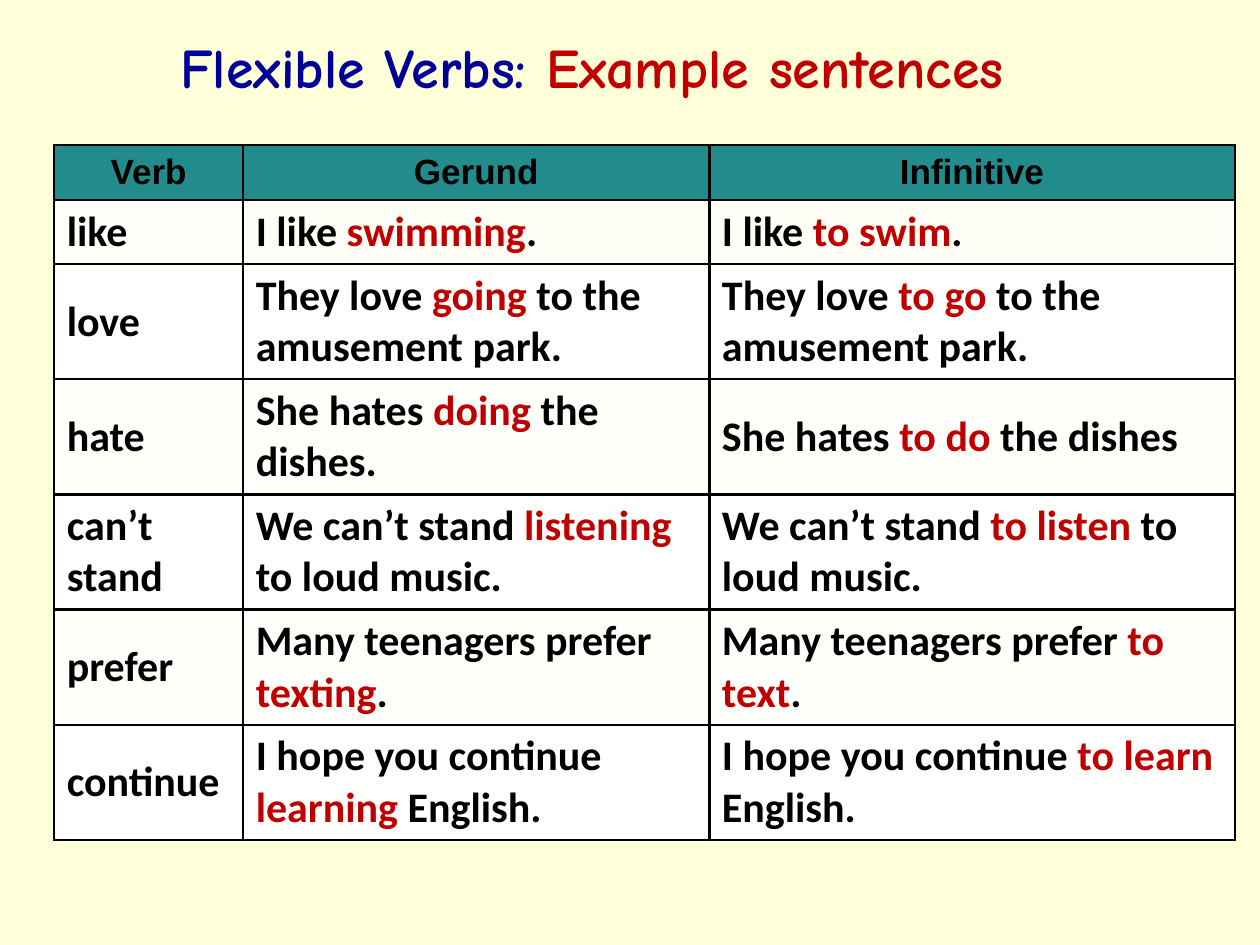
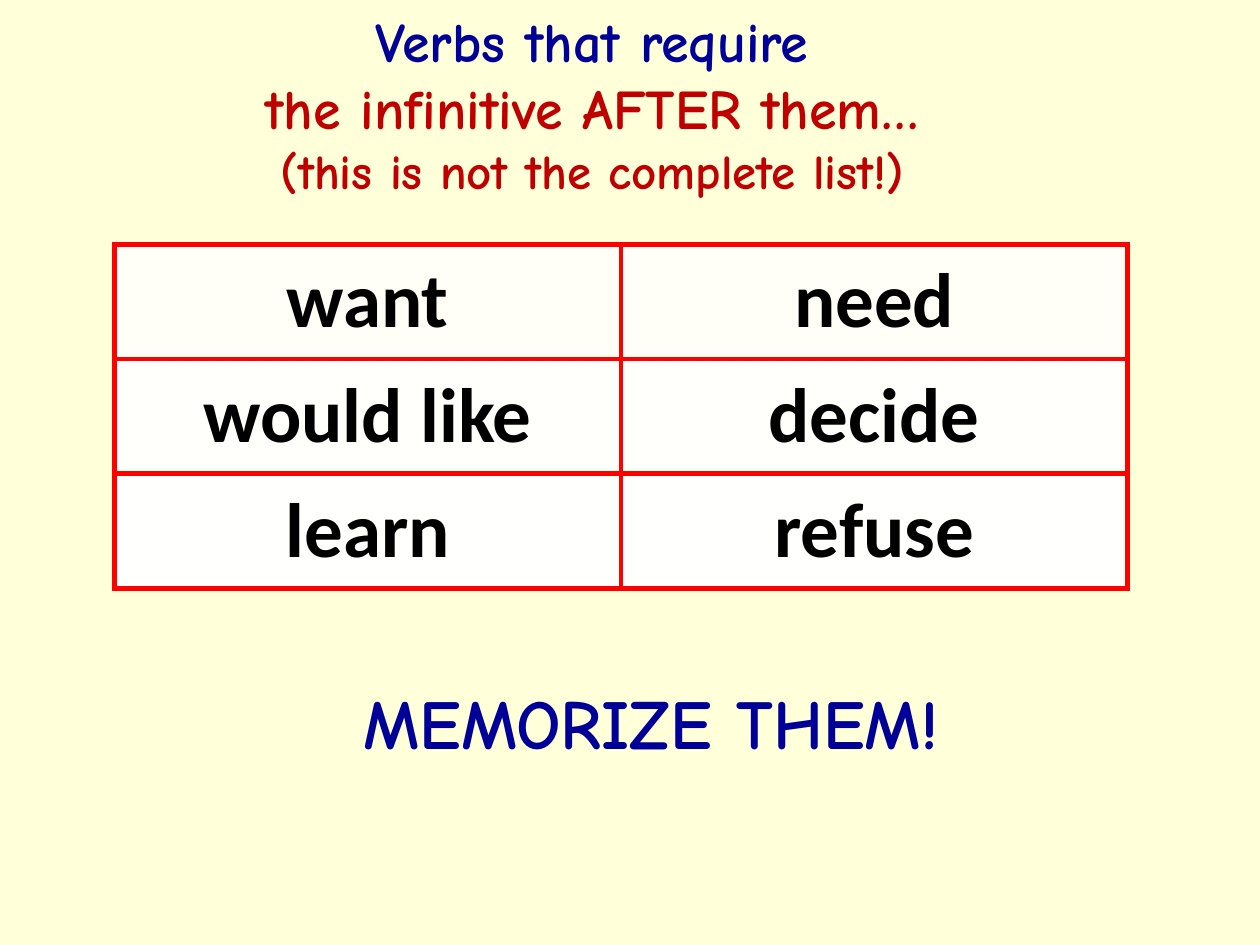
from copy import deepcopy
from dataclasses import dataclass

from lxml.etree import SubElement as Sub
from pptx import Presentation as Deck
from pptx.dml.color import RGBColor as Rgb
from pptx.enum.text import MSO_ANCHOR as Anchor, MSO_AUTO_SIZE as Fit, PP_ALIGN as Align
from pptx.oxml import parse_xml
from pptx.oxml.ns import nsdecls, qn
from pptx.util import Inches, Pt


@dataclass(frozen=True)
class Theme:
    page: str = "FFFFD9"
    navy: str = "000099"
    red: str = "C00000"
    black: str = "000000"
    teal: str = "228B8B"
    frame: str = "FF0000"
    cream: str = "FFFFF7"
    pale: str = "FFFFFC"
    white: str = "FFFFFD"
    comic: str = "Comic Neue"
    sans: str = "Arial"
    body: str = "Calibri"
    head: int = 20
    cell: int = 24
    note: int = 28
    title: int = 32
    shout: int = 40
    word: int = 44


T = Theme()


def write(para, text, font=T.body, size=T.cell, color=T.black, align=None):
    if align is not None:
        para.alignment = align
    for i, part in enumerate(text.split("|")):
        for j, line in enumerate(part.split("\n")):
            if j:
                para.add_line_break()
                para._p[-1].append(deepcopy(run._r.rPr))
            if not line:
                continue
            run = para.add_run()
            run.text = line
            run.font.name, run.font.size, run.font.bold = font, Pt(size), True
            run.font.color.rgb = Rgb.from_string(T.red if i % 2 else color)
    return run


def add_title(slide, top, high):
    title = slide.shapes.title
    title.left, title.top = Inches(0.2), Inches(top)
    title.width, title.height = Inches(9), Inches(high)
    frame = title.text_frame
    frame.word_wrap, frame.auto_size = True, Fit.NONE
    frame.vertical_anchor = Anchor.MIDDLE
    return frame.paragraphs[0]


def edge(cell, color, width):
    props = cell._tc.get_or_add_tcPr()
    for side in "LRTB":
        line = Sub(props, qn("a:ln" + side), w=str(Pt(width)))
        Sub(Sub(line, qn("a:solidFill")), qn("a:srgbClr"), val=color)


def paint(cell, color):
    cell.fill.solid()
    cell.fill.fore_color.rgb = Rgb.from_string(color)


def add_grid(slide, left, top, cols, high, rows, fills, styles, line, width):
    shape = slide.shapes.add_table(
        len(rows), len(cols), Inches(left), Inches(top),
        Inches(sum(cols)), Inches(high * len(rows)))
    grid = shape.table
    grid.first_row = grid.horz_banding = False
    for col, wide in zip(grid.columns, cols):
        col.width = Inches(wide)
    for row, texts, fill, style in zip(grid.rows, rows, fills, styles):
        row.height = Inches(high)
        for cell, text in zip(row.cells, texts):
            edge(cell, line, width)
            paint(cell, fill)
            cell.vertical_anchor = Anchor.MIDDLE
            write(cell.text_frame.paragraphs[0], text, **style)
    return grid


def add_shout(slide, text):
    box = slide.shapes.add_textbox(Inches(2.45), Inches(5.34), Inches(5.44), Inches(0.77))
    frame = box.text_frame
    frame.word_wrap, frame.auto_size = False, Fit.SHAPE_TO_FIT_TEXT
    run = write(frame.paragraphs[0], text, font=T.comic, size=T.shout,
                color=T.navy, align=Align.CENTER)
    run._r.rPr.insert(0, parse_xml(
        f'<a:ln {nsdecls("a")} w="{Pt(0.71)}"><a:solidFill>'
        f'<a:srgbClr val="{T.black}"/></a:solidFill></a:ln>'))


def add_uses(slide):
    para = add_title(slide, 0.13, 0.79)
    write(para, "Flexible Verbs: |Example sentences", font=T.comic,
          size=T.title, color=T.navy, align=Align.CENTER)
    rows = [
        ("Verb", "Gerund", "Infinitive"),
        ("like", "I like |swimming|.", "I like |to swim|."),
        ("love", "They love |going |to the amusement park.",
         "They love |to go |to the amusement park."),
        ("hate", "She hates |doing |the dishes.", "She hates |to do| the dishes"),
        ("can’t stand", "We can’t stand |listening |to loud music.",
         "We can’t stand |to listen |to loud music."),
        ("prefer", "Many teenagers prefer |texting|.", "Many teenagers prefer |to text|."),
        ("continue", "I hope you continue |learning| English.",
         "I hope you continue |to learn |English."),
    ]
    head = dict(font=T.sans, size=T.head, align=Align.CENTER)
    grid = add_grid(slide, 0.43, 1.15, (1.5, 3.7, 4.17), 0.44, rows,
                    [T.teal] + [T.pale, T.white] * 3, [head] + [{}] * 6, T.black, 1.5)
    for col in (1, 2):
        paint(grid.cell(1, col), T.cream)


def add_list(slide):
    para = add_title(slide, 0.32, 0.99)
    look = dict(font=T.comic, color=T.navy, align=Align.CENTER)
    write(para, "Verbs that require\n|the infinitive AFTER them…\n", size=T.title, **look)
    write(para, "|(this is not the complete list!)", size=T.note, **look)
    add_shout(slide, "MEMORIZE THEM!")
    rows = [("want", "need"), ("would like", "decide"), ("learn", "refuse")]
    word = dict(size=T.word, align=Align.CENTER)
    add_grid(slide, 0.91, 1.94, (4.02, 4.02), 0.91, rows,
             (T.cream, T.pale, T.white), [word] * 3, T.frame, 3)


def main():
    deck = Deck()
    deck.slide_width, deck.slide_height = Inches(10), Inches(7.5)
    back = deck.slide_master.background.fill
    back.solid()
    back.fore_color.rgb = Rgb.from_string(T.page)
    for build in (add_uses, add_list):
        build(deck.slides.add_slide(deck.slide_layouts[5]))
    deck.save("out.pptx")


if __name__ == "__main__":
    main()
